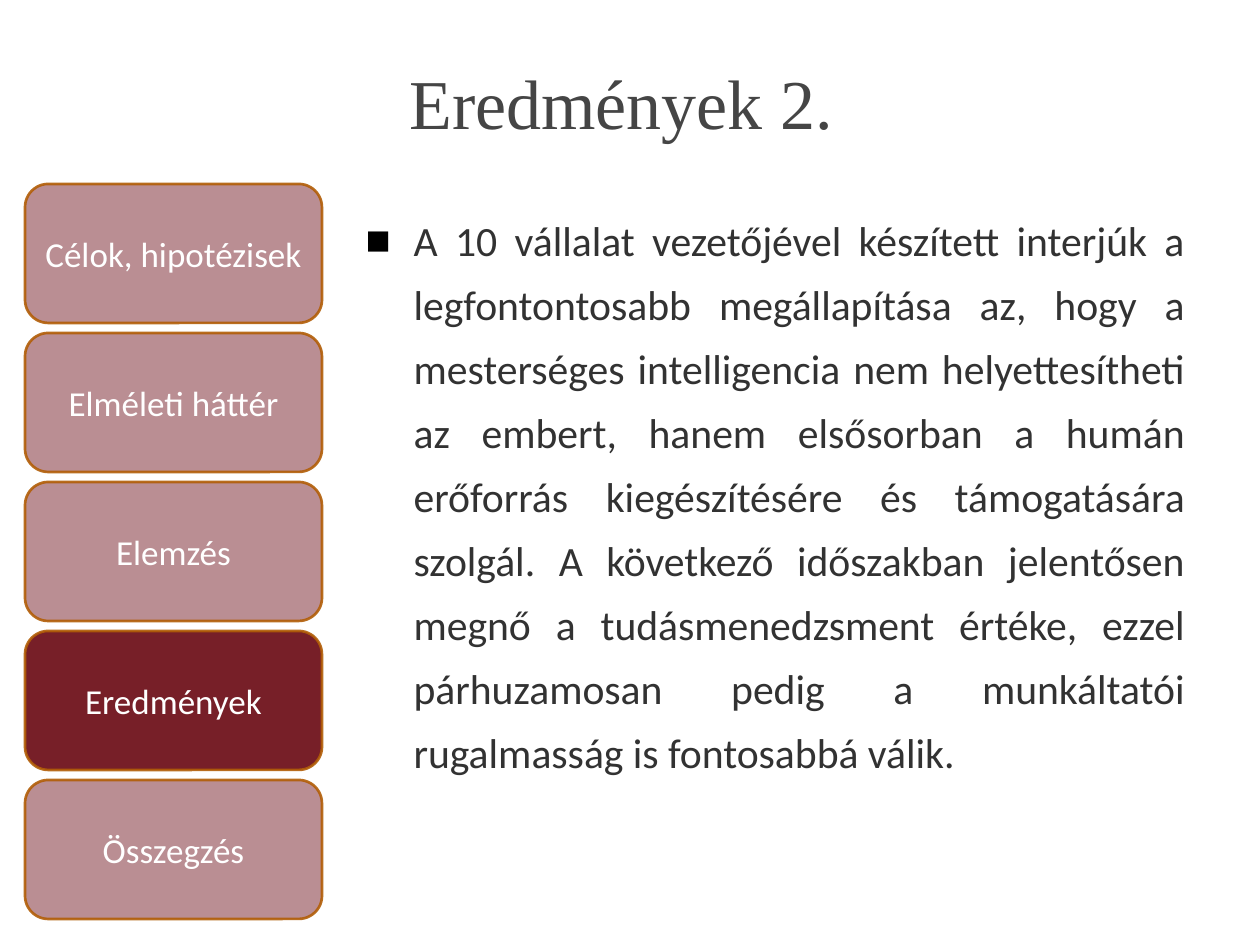
from lxml import etree
from pptx import Presentation, util as u
from pptx.dml.color import RGBColor
from pptx.enum import shapes, text
from pptx.oxml.ns import qn

PX = 914400 / 126
WINE = RGBColor(0x77, 0x1F, 0x28)
RUST = RGBColor(0xB2, 0x5E, 0x07)
GREY = RGBColor(0x45, 0x45, 0x45)
DARK = RGBColor(0x32, 0x32, 0x32)
WHITE = RGBColor(0xFF, 0xFF, 0xFF)

STEPS = ["Célok, hipotézisek", "Elméleti háttér", "Elemzés",
         "Eredmények", "Összegzés"]
ACTIVE = "Eredmények"
BODY = (
    "A 10 vállalat vezetőjével készített interjúk a legfontontosabb "
    "megállapítása az, hogy a mesterséges intelligencia nem helyettesítheti "
    "az embert, hanem elsősorban a humán erőforrás kiegészítésére és "
    "támogatására szolgál. A következő időszakban jelentősen megnő a "
    "tudásmenedzsment értéke, ezzel párhuzamosan pedig a munkáltatói "
    "rugalmasság is fontosabbá válik."
)


def px(*vals):
    return [round(v * PX) for v in vals]


def place(item, *box):
    item.left, item.top, item.width, item.height = px(*box)


def write(item, words, face, size, color, align, anchor):
    """Fill a shape with one formatted paragraph."""
    frame = item.text_frame
    frame.word_wrap = True
    frame.auto_size = text.MSO_AUTO_SIZE.NONE
    frame.vertical_anchor = anchor
    para = frame.paragraphs[0]
    para.text = words
    para.alignment = align
    para.font.name = face
    para.font.size = u.Pt(size)
    para.font.color.rgb = color
    return para


def bullet(para, mark, indent):
    """Give a paragraph a black bullet and a hanging indent."""
    props = para._p.get_or_add_pPr()
    props.set("marL", str(indent))
    props.set("indent", str(-indent))
    tint = etree.Element(qn("a:buClr"))
    etree.SubElement(tint, qn("a:srgbClr"), val="000000")
    sign = etree.Element(qn("a:buChar"), char=mark)
    # Bullet marks stand before the default run properties
    for node in (tint, sign):
        props.find(qn("a:defRPr")).addprevious(node)


def fade(fill, share):
    """Set the opacity of a solid fill, in percent."""
    color = fill.find(".//" + qn("a:srgbClr"))
    etree.SubElement(color, qn("a:alpha"), val=str(share * 1000))


def button(slide, label, *box):
    item = slide.shapes.add_shape(
        shapes.MSO_SHAPE.ROUNDED_RECTANGLE, *px(*box))
    item.shadow.inherit = False
    item.fill.solid()
    item.fill.fore_color.rgb = WINE
    item.line.color.rgb = RUST
    item.line.width = u.Pt(1.54)
    props = item._element.spPr
    if label != ACTIVE:
        fade(props.find(qn("a:solidFill")), 50)
    fade(props.find(qn("a:ln")), 90)
    write(item, label, "Calibri", 20, WHITE,
          text.PP_ALIGN.CENTER, text.MSO_ANCHOR.MIDDLE)


def main():
    deck = Presentation()
    deck.slide_width, deck.slide_height = px(1260, 945)
    slide = deck.slides.add_slide(deck.slide_layouts[1])
    title, body = slide.placeholders

    # Title
    place(title, 63, 38, 1134, 127)
    write(title, "Eredmények 2. ", "Times New Roman", 40, GREY,
          text.PP_ALIGN.CENTER, text.MSO_ANCHOR.MIDDLE)

    # Main finding
    place(body, 353, 195, 844, 714)
    para = write(body, BODY, "Calibri", 23.8, DARK,
                 text.PP_ALIGN.JUSTIFY, text.MSO_ANCHOR.TOP)
    para.line_spacing = 1.28
    bullet(para, "■", px(48)[0])

    # Progress column
    for row, label in enumerate(STEPS):
        button(slide, label, 25, 184 + 149 * row, 297, 139)

    deck.save("out.pptx")


if __name__ == "__main__":
    main()
